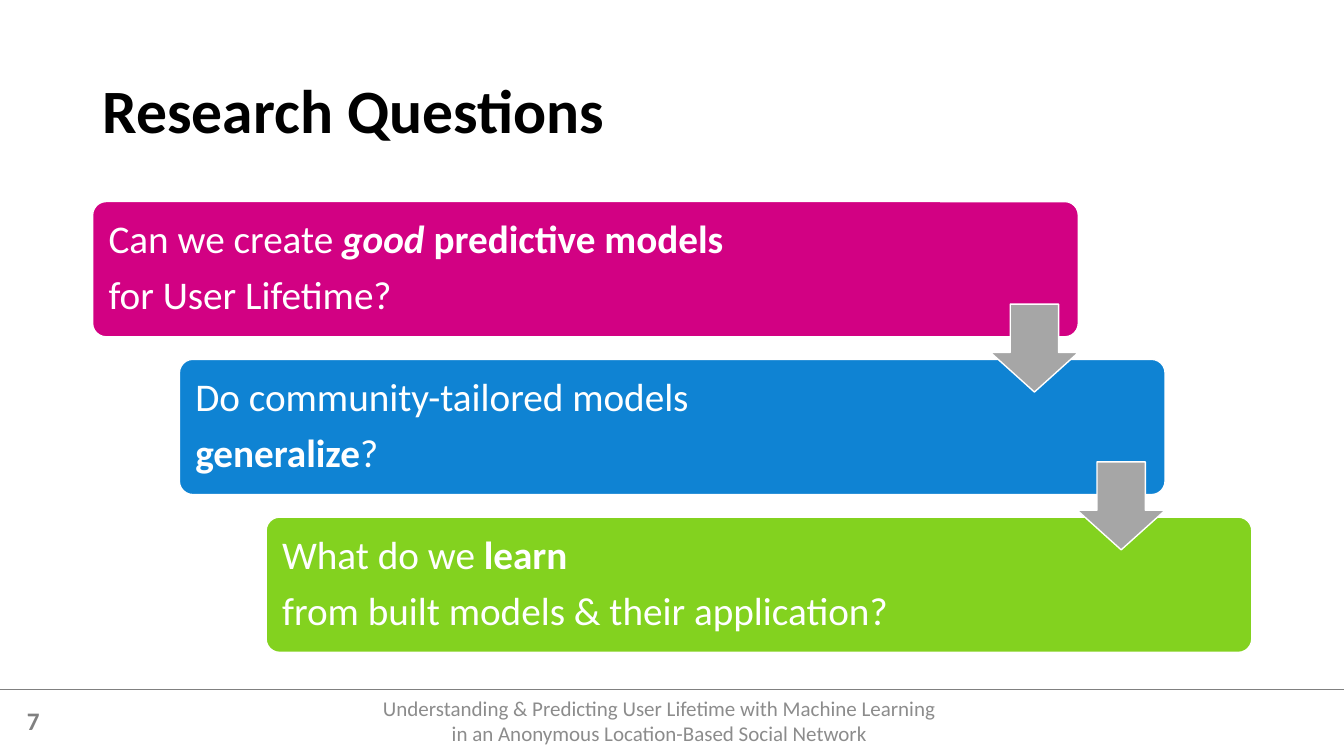
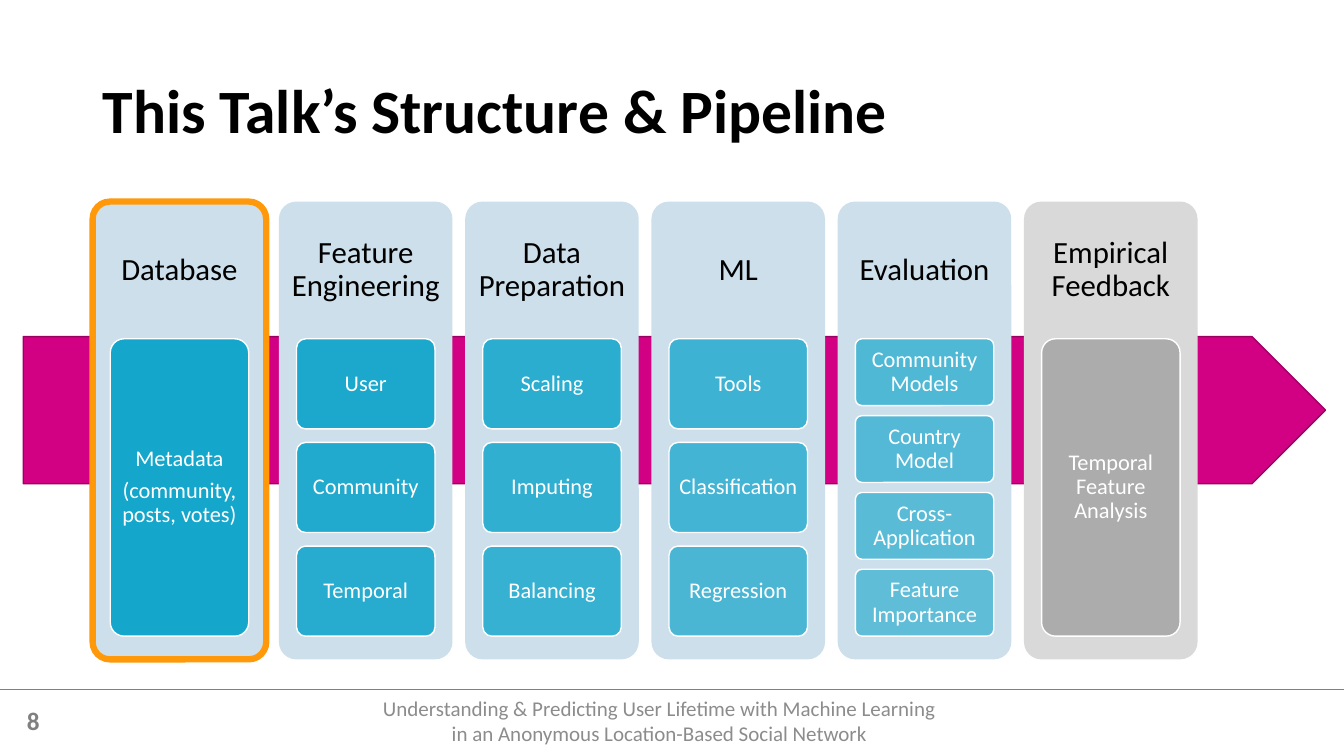
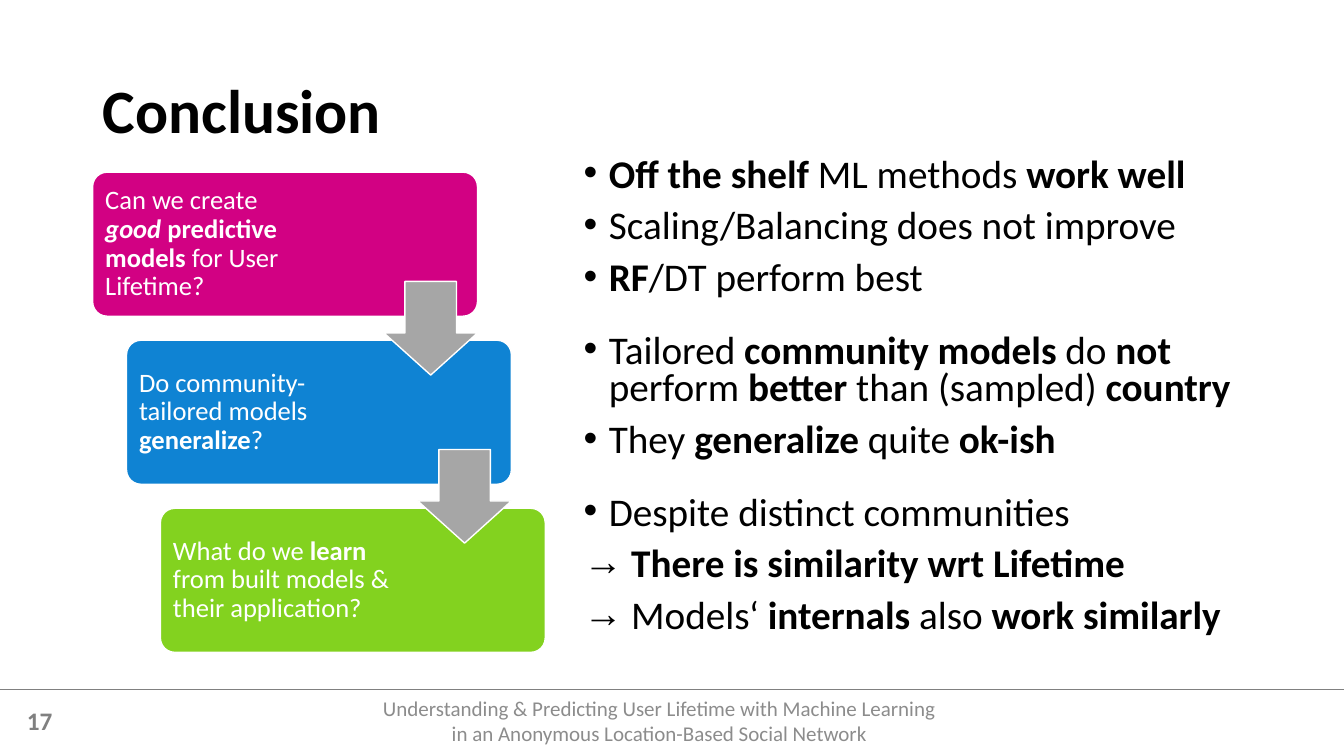
from dataclasses import dataclass

from lxml.etree import SubElement
from pptx import Presentation
from pptx.dml.color import RGBColor
from pptx.enum.shapes import MSO_CONNECTOR, MSO_SHAPE
from pptx.enum.text import MSO_ANCHOR, MSO_AUTO_SIZE, PP_ALIGN
from pptx.oxml.ns import qn
from pptx.util import Pt


@dataclass(frozen=True)
class Theme:
    font: str = "Calibri"
    bullet_font: str = "Arial"
    # Colours
    black: str = "000000"
    white: str = "FFFFFF"
    magenta: str = "D20183"
    magenta_dark: str = "9B0161"
    blue: str = "0F83D3"
    green: str = "83D21F"
    orange: str = "FF9909"
    arrow: str = "A6A6A6"
    card: str = "CCDFEB"
    card_muted: str = "D9D9D9"
    tile: str = "01A0C8"
    gray: str = "808080"
    footer: str = "8C8C8C"
    # Type sizes
    title_size: int = 44
    body_size: int = 28
    header_size: int = 22
    question_size: int = 19
    number_size: int = 18
    tile_size: int = 16
    footer_size: int = 15


THEME = Theme()
BOLD, BOLD_ITALIC = "b", "bi"
LEFT = 66.2  # common left edge of titles and diagrams
FOOTER = ("Understanding & Predicting User Lifetime with Machine Learning",
          "in an Anonymous Location-Based Social Network")


class SlideBuilder:
    """Holds the deck, its theme and the slide being drawn."""

    def __init__(self, deck, theme):
        self.deck, self.theme, self.page = deck, theme, None

    # Slide frame
    def start(self, title, number, layout="Title Only"):
        self.page = self.deck.slides.add_slide(self.deck.slide_layouts.get_by_name(layout))
        theme = self.theme
        box = self.place(self.page.shapes.title, LEFT, 28.8, 828, 104.4)
        self.fill_text(box.text_frame, [[title]], theme.title_size, theme.black,
                       anchor=MSO_ANCHOR.MIDDLE, style=BOLD)
        self.rule(492.5)
        self.text(12.2, 500.4, 216, 28.8, [[str(number)]], theme.number_size,
                  theme.gray, style=BOLD, spacing=1)
        self.text(157, 500.4, 627.8, 28.8, [[line] for line in FOOTER], theme.footer_size,
                  theme.footer, align=PP_ALIGN.CENTER, anchor=MSO_ANCHOR.MIDDLE, spacing=1)

    def rule(self, y):
        line = self.page.shapes.add_connector(
            MSO_CONNECTOR.STRAIGHT, Pt(0), Pt(y), self.deck.slide_width, Pt(y))
        line.line.color.rgb = RGBColor.from_string(self.theme.gray)
        line.line.width = Pt(0.75)
        SubElement(line._element.spPr, qn("a:effectLst"))

    # Basic elements
    def place(self, box, left, top, width, height):
        box.left, box.top, box.width, box.height = Pt(left), Pt(top), Pt(width), Pt(height)
        return box

    def shape(self, kind, left, top, width, height, fill=None, line=None,
              line_width=1, adjust=(0.1,), opacity=None):
        shape = self.page.shapes.add_shape(kind, Pt(left), Pt(top), Pt(width), Pt(height))
        shape.shadow.inherit = False
        for index, value in enumerate(adjust):
            shape.adjustments[index] = value
        if fill:
            shape.fill.solid()
            shape.fill.fore_color.rgb = RGBColor.from_string(fill)
        else:
            shape.fill.background()
        if opacity is not None:
            color = shape._element.spPr.find(".//" + qn("a:srgbClr"))
            SubElement(color, qn("a:alpha")).set("val", str(round(opacity * 1000)))
        if line:
            shape.line.color.rgb = RGBColor.from_string(line)
            shape.line.width = Pt(line_width)
        else:
            shape.line.fill.background()
        return shape

    def text(self, left, top, width, height, paragraphs, size, color, **options):
        box = self.page.shapes.add_textbox(Pt(left), Pt(top), Pt(width), Pt(height))
        self.fill_text(box.text_frame, paragraphs, size, color, **options)

    def fill_text(self, frame, paragraphs, size, color, align=PP_ALIGN.LEFT,
                  anchor=MSO_ANCHOR.TOP, style="", spacing=0.9, after=0, insets=None):
        """Each paragraph is a list of runs: plain text or (text, style)."""
        frame.word_wrap = True
        frame.auto_size = MSO_AUTO_SIZE.NONE
        frame.vertical_anchor = anchor
        if insets:
            (frame.margin_left, frame.margin_top,
             frame.margin_right, frame.margin_bottom) = map(Pt, insets)
        for index, runs in enumerate(paragraphs):
            para = frame.add_paragraph() if index else frame.paragraphs[0]
            para.alignment = align
            para.line_spacing = spacing
            para.space_after = Pt(after)
            self.add_runs(para, runs, size, color, style)

    def add_runs(self, para, runs, size, color, style=""):
        for run in runs:
            words, run_style = (run, style) if isinstance(run, str) else run
            span = para.add_run()
            span.text = words
            span.font.name = self.theme.font
            span.font.size = Pt(size)
            span.font.bold = "b" in run_style
            span.font.italic = "i" in run_style
            span.font.color.rgb = RGBColor.from_string(color)

    # Diagrams and lists
    def staircase(self, top, width, height, questions, size, inset, right_insets):
        """Three boxes stepping down to the right, joined by arrows."""
        theme = self.theme
        box_width, box_height = width / 1.176, height * 0.3
        step_x, step_y = (width - box_width) / 2, (height - box_height) / 2
        fills = (theme.magenta, theme.blue, theme.green)
        for index, (fill, question, right) in enumerate(zip(fills, questions, right_insets)):
            box = self.shape(MSO_SHAPE.ROUNDED_RECTANGLE, LEFT + index * step_x,
                             top + index * step_y, box_width, box_height, fill, theme.white)
            self.fill_text(box.text_frame, question, size, theme.white,
                           anchor=MSO_ANCHOR.MIDDLE, after=0.35 * size,
                           insets=(inset, inset, right, inset))
        side = 0.65 * box_height
        for index in range(2):
            gap_middle = top + index * step_y + (box_height + step_y) / 2
            self.shape(MSO_SHAPE.DOWN_ARROW, LEFT + index * step_x + box_width - side,
                       gap_middle - side / 2, side, side, theme.arrow, theme.white,
                       adjust=(0.55, 0.45))

    def pipeline(self, stages):
        """Columns of tiles that fade from one tile to the next."""
        theme = self.theme
        top, width, height, pitch = 144, 124, 327, 133.05
        tiles_top, tiles_height, tile_width = 242, 212.4, 98.9
        total = sum(len(tiles) for _, tiles in stages)
        drawn = 0
        for column, (header, tiles) in enumerate(stages):
            left = LEFT + column * pitch
            muted = column == len(stages) - 1
            card = self.shape(MSO_SHAPE.ROUNDED_RECTANGLE, left, top, width, height,
                              theme.card_muted if muted else theme.card)
            self.fill_text(card.text_frame, [[header]], theme.header_size, theme.black,
                           PP_ALIGN.CENTER, MSO_ANCHOR.MIDDLE, insets=(3, 3, 3, 232))
            tile_height = tiles_height / (len(tiles) + 0.15 * (len(tiles) - 1))
            for row, lines in enumerate(tiles):
                tile = self.shape(MSO_SHAPE.ROUNDED_RECTANGLE, left + (width - tile_width) / 2,
                                  tiles_top + row * 1.15 * tile_height, tile_width, tile_height,
                                  theme.gray if muted else theme.tile, theme.white,
                                  opacity=90 - 40 * drawn / (total - 1))
                self.fill_text(tile.text_frame, [[line] for line in lines], theme.tile_size,
                               theme.white, PP_ALIGN.CENTER, MSO_ANCHOR.MIDDLE,
                               after=0.35 * theme.tile_size, insets=(3, 2, 3, 2))
                drawn += 1
        # Frame around the current stage
        self.shape(MSO_SHAPE.ROUNDED_RECTANGLE, LEFT, top, width, height,
                   line=theme.orange, line_width=4.5)

    def bullets(self, left, top, width, height, groups):
        """Groups of (bullet, runs), set apart by a wider space."""
        box = self.place(self.page.placeholders[1], left, top, width, height)
        frame = box.text_frame
        frame.auto_size = MSO_AUTO_SIZE.NONE
        first = True
        for group in groups:
            for index, (bullet, runs) in enumerate(group):
                para = frame.paragraphs[0] if first else frame.add_paragraph()
                indent = Pt(18 if bullet == "•" else 34)
                properties = para._p.get_or_add_pPr()
                properties.set("marL", str(indent))
                properties.set("indent", str(-indent))
                SubElement(properties, qn("a:buFont")).set("typeface", self.theme.bullet_font)
                SubElement(properties, qn("a:buChar")).set("char", bullet)
                para.line_spacing = 0.8
                para.space_before = Pt(0 if first else 10 if index else 25)
                self.add_runs(para, runs, self.theme.body_size, self.theme.black)
                first = False


def research_questions(builder):
    builder.start("Research Questions", 7)
    questions = (
        [["Can we create ", ("good", BOLD_ITALIC), (" predictive models", BOLD)],
         ["for User Lifetime?"]],
        [["Do community-tailored models"], [("generalize", BOLD), "?"]],
        [["What do we ", ("learn", BOLD)], ["from built models & their application?"]],
    )
    builder.staircase(144, 828, 322, questions, THEME.body_size, 8.6, (8.6, 8.6, 8.6))


def talk_structure(builder):
    builder.start("This Talk’s Structure & Pipeline", 8)
    builder.shape(MSO_SHAPE.RIGHT_ARROW, 16.6, 240.5, 930.2, 105.1, THEME.magenta,
                  THEME.magenta_dark, adjust=(1, 0.5))
    builder.pipeline((
        ("Database", [["Metadata", "(community, posts, votes)"]]),
        ("Feature Engineering", [["User"], ["Community"], ["Temporal"]]),
        ("Data Preparation", [["Scaling"], ["Imputing"], ["Balancing"]]),
        ("ML", [["Tools"], ["Classification"], ["Regression"]]),
        ("Evaluation", [["Community Models"], ["Country Model"],
                        ["Cross-Application"], ["Feature Importance"]]),
        ("Empirical Feedback", [["Temporal Feature Analysis"]]),
    ))


def conclusion(builder):
    builder.start("Conclusion", 17, "Title and Content")
    questions = (
        [["Can we create ", ("good", BOLD_ITALIC), (" predictive models", BOLD),
          " for User Lifetime?"]],
        [["Do community-tailored models ", ("generalize", BOLD), "?"]],
        [["What do we ", ("learn ", BOLD), "from built models & their application?"]],
    )
    builder.staircase(123, 323.3, 343, questions, THEME.question_size, 6, (111, 96.5, 96.5))
    builder.bullets(409.7, 109.4, 504.7, 370.8, (
        (("•", [("Off the shelf", BOLD), " ML methods ", ("work well", BOLD)]),
         ("•", ["Scaling/Balancing does not improve"]),
         ("•", [("RF", BOLD), "/DT perform best"])),
        (("•", ["Tailored ", ("community models", BOLD), " do ", ("not ", BOLD), "perform ",
                ("better ", BOLD), "than (sampled) ", ("country", BOLD)]),
         ("•", ["They ", ("generalize ", BOLD), "quite ", ("ok-ish", BOLD)])),
        (("•", ["Despite distinct communities"]),
         ("→", [("There is similarity wrt Lifetime", BOLD)]),
         ("→", ["Models‘ ", ("internals", BOLD), " also ", ("work similarly", BOLD)])),
    ))


def main():
    deck = Presentation()
    deck.slide_width, deck.slide_height = Pt(960), Pt(540)
    builder = SlideBuilder(deck, THEME)
    for draw in (research_questions, talk_structure, conclusion):
        draw(builder)
    deck.save("out.pptx")


if __name__ == "__main__":
    main()
